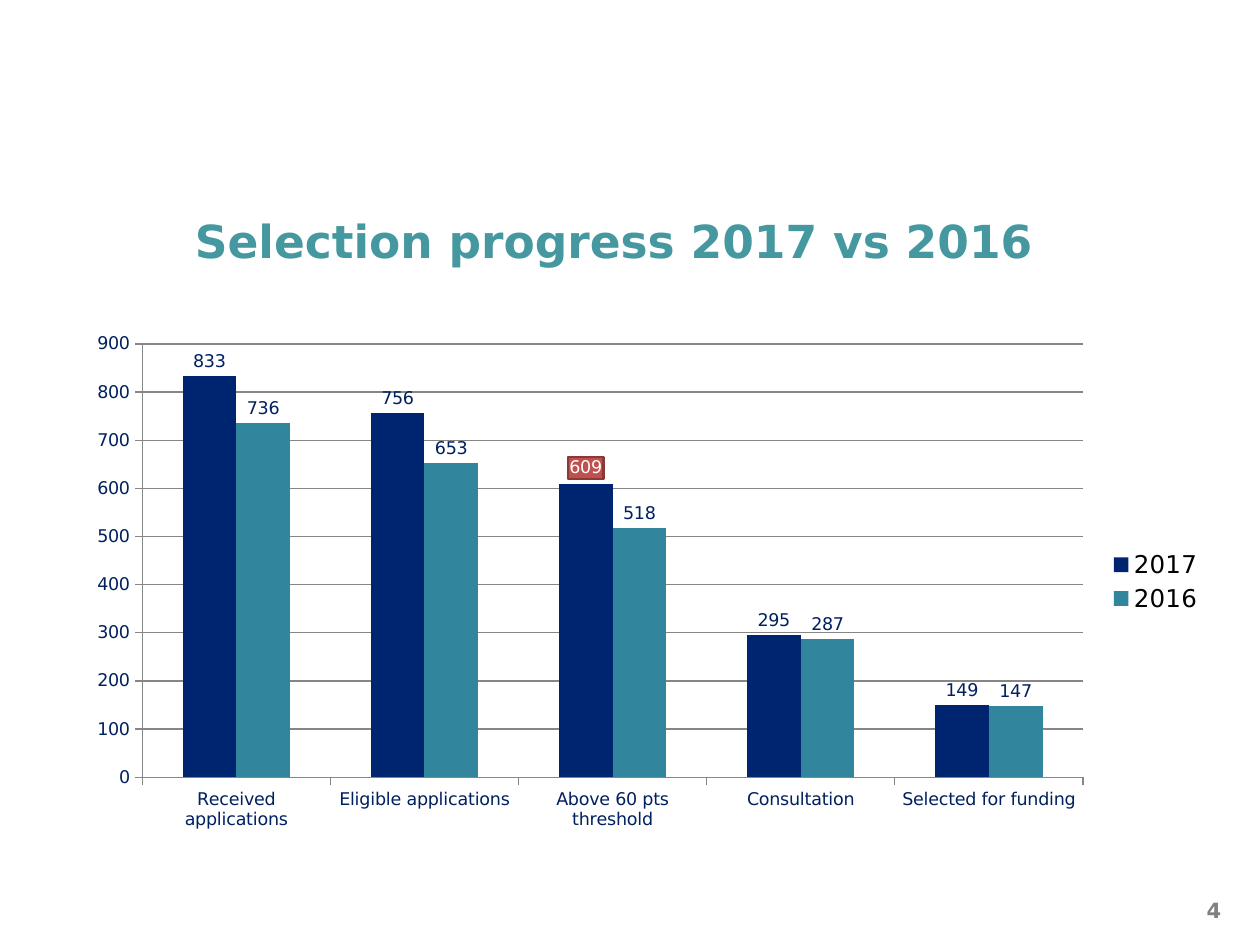
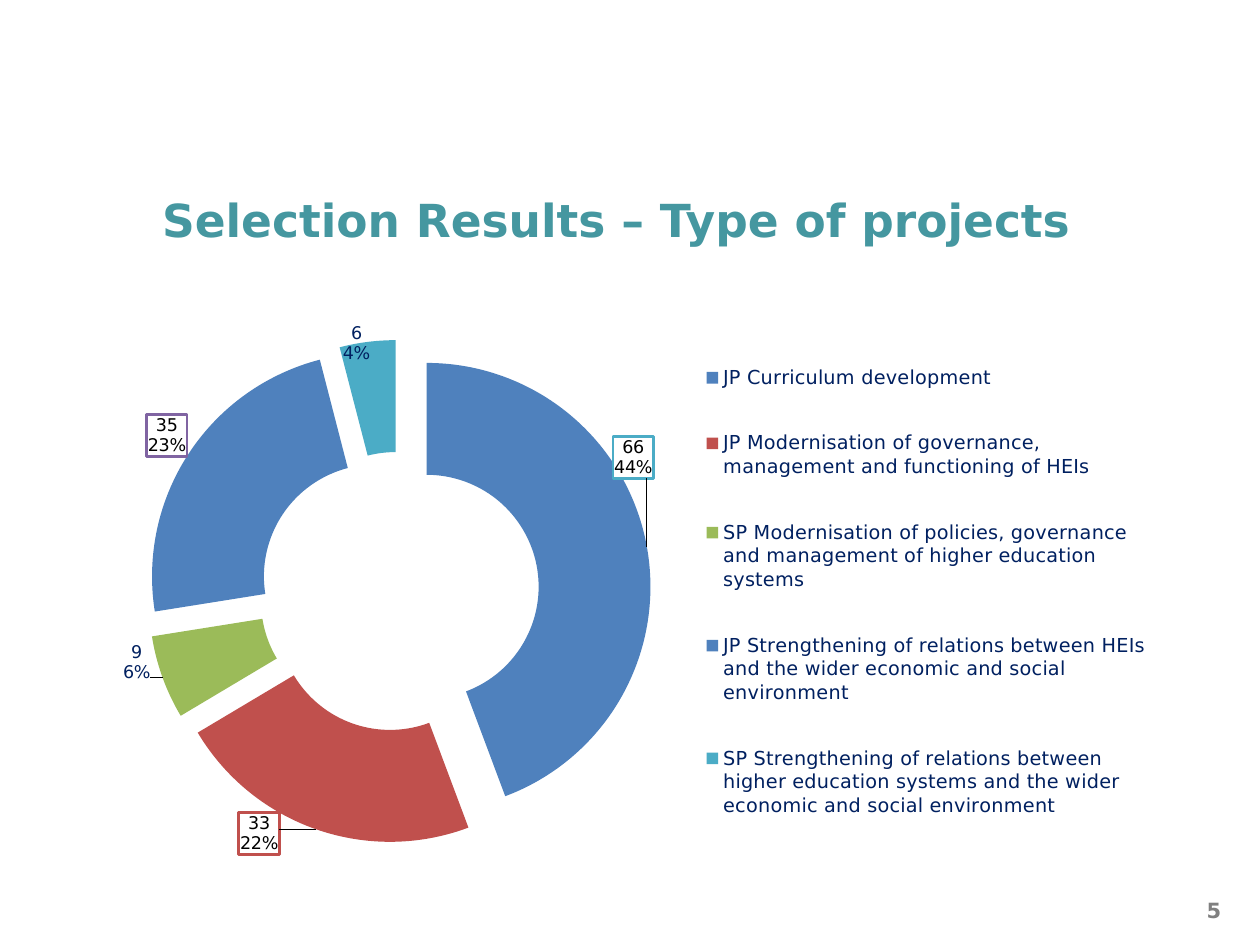
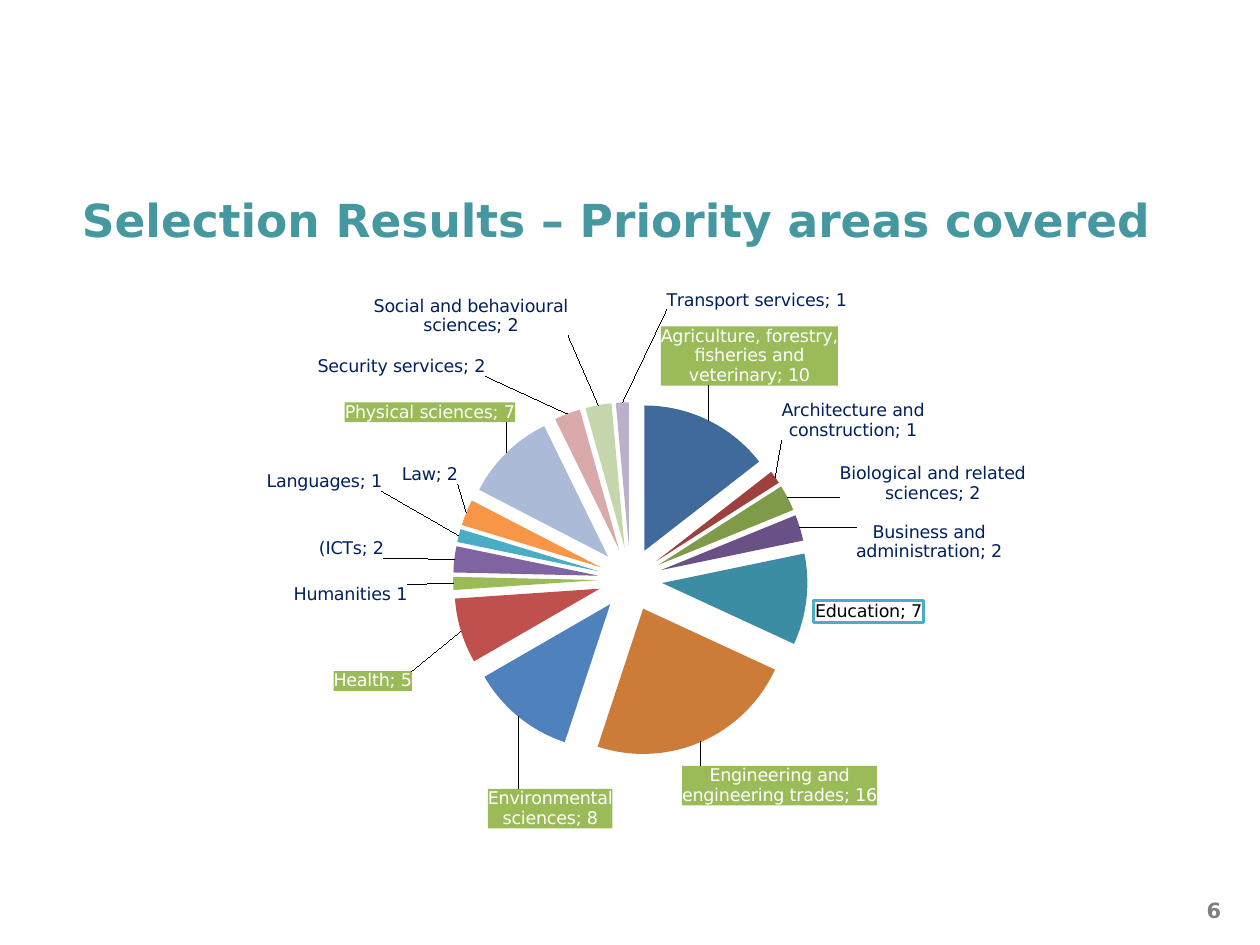
import math

import pptx
import pptx.chart.data
import pptx.dml.color
import pptx.enum.chart
import pptx.enum.text
import pptx.oxml
import pptx.oxml.ns
import pptx.util

Cm = pptx.util.Cm
FONT = "DejaVu Sans"
TEAL, GRAY, NAVY, BLACK, WHITE = "4597A0", "808080", "002060", "000000", "FFFFFF"
GREEN = "9BBB59"
LINE_HEIGHT = 0.4

PROGRESS = {
    "number": 4,
    "title": ("Selection progress 2017 vs 2016", (0.08, 4.34, 24.61, 1.19)),
    "area": (1.5, 6.53, 23.01, 10.39),
    "categories": ["Received applications", "Eligible applications", "Above 60 pts threshold",
                   "Consultation", "Selected for funding"],
    "series": [("2017", [833, 756, 609, 295, 149], "002570"),
               ("2016", [736, 653, 518, 287, 147], "31859C")],
}

PROJECT_TYPES = {
    "number": 5,
    "title": ("Selection Results – Type of projects", (2.87, 3.92, 19.13, 1.19)),
    "area": (2.11, 6.53, 21.21, 10.8),
    "plot": {"x": 0.04, "y": 0.03, "w": 0.48, "h": 0.94},
    "legend": {"x": 0.566, "y": 0, "w": 0.43, "h": 1},
    "centre": (8.02, 11.91),
    "radius": 3.93,
    "explosion": 25,
    "slices": [
        ("JP Curriculum development", 66, "4F81BD", (12.72, 9.21), "4BACC6"),
        ("JP Modernisation of governance, management and functioning of HEIs",
         33, "C0504D", (5.2, 16.77), "C0504D"),
        ("SP Modernisation of policies, governance and management of higher education systems",
         9, "9BBB59", (2.74, 13.33), None),
        ("JP Strengthening of relations between HEIs and the wider economic and social environment",
         35, "4F81BD", (3.35, 8.77), "8064A2"),
        ("SP Strengthening of relations between higher education systems and the wider "
         "economic and social environment", 6, "4BACC6", (7.16, 6.92), None),
    ],
}

PLAIN = {"color": NAVY}
FILLED = {"color": WHITE, "fill": GREEN}
OUTLINED = {"color": BLACK, "fill": WHITE, "line": "4BACC6"}

PRIORITY_AREAS = {
    "number": 6,
    "title": ("Selection Results – Priority areas covered", (1.32, 3.92, 22.23, 1.19)),
    "area": (2.64, 5.54, 20.14, 11.79),
    "plot": {"x": 0, "y": 0.218, "w": 1, "h": 0.606},
    "centre": (12.7, 11.67),
    "radius": 3.69,
    "explosion": 22,
    "slices": [
        ("Agriculture, forestry, fisheries and veterinary", 10, "416A9C", (13.3, 6.59, 3.57, 3), FILLED),
        ("Architecture and construction", 1, "9E413E", (15.72, 8.08, 2.9, 2), PLAIN),
        ("Biological and related sciences", 2, "7F9A48", (16.89, 9.35, 3.73, 2), PLAIN),
        ("Business and administration", 2, "695185", (17.22, 10.52, 2.94, 2), PLAIN),
        ("Education", 7, "3C8DA3", None, OUTLINED),
        ("Engineering and engineering trades", 16, "CC7B38", (13.73, 15.4, 3.37, 3), FILLED),
        ("Environmental sciences", 8, "4F81BD", (9.86, 15.87, 2.5, 2), FILLED),
        ("Health", 5, "C0504D", (6.75, 13.51, 1.57, 1), FILLED),
        ("Humanities (except languages)", 1, "9BBB59", (5.95, 11.77, 2.28, 1), PLAIN),
        ("Information and Communication Technologies (ICTs)", 2, "8064A2", (6.45, 10.85, 1.31, 1), PLAIN),
        ("Languages", 1, "4BACC6", (5.4, 9.5, 2.32, 1), PLAIN),
        ("Law", 2, "F79646", (8.12, 9.37, 1.13, 1), PLAIN),
        ("Physical sciences", 7, "AABAD7", (6.96, 8.12, 3.43, 1), FILLED),
        ("Security services", 2, "D9AAA9", (6.41, 7.2, 3.37, 1), PLAIN),
        ("Social and behavioural sciences", 2, "C6D6AC", (7.54, 5.99, 3.91, 2), PLAIN),
        ("Transport services", 1, "BAB0C9", (13.43, 5.87, 3.63, 1), PLAIN),
    ],
    "short_labels": {8: "Humanities 1", 9: "(ICTs; 2"},
}


def rgb(value):
    return pptx.dml.color.RGBColor.from_string(value)


def tag(name):
    return pptx.oxml.ns.qn(f"c:{name}")


def xml(text):
    names = pptx.oxml.ns.nsdecls("c", "a")
    return pptx.oxml.parse_xml(text.replace(">", f" {names}>", 1))


def layout(places, fixed=False, inner=False):
    target = '<c:layoutTarget val="inner"/>' if inner else ""
    modes = "".join(f'<c:{side}Mode val="edge"/>' for side in "xy") if fixed else ""
    sizes = "".join(f'<c:{key} val="{value:.4f}"/>' for key, value in places.items())
    return xml(f"<c:layout><c:manualLayout>{target}{modes}{sizes}</c:manualLayout></c:layout>")


def style(font, size=10, color=BLACK, bold=False):
    font.name, font.size, font.bold = FONT, pptx.util.Pt(size), bold
    font.color.rgb = rgb(color)


def write(frame, text, align, spacing=None, **look):
    para = frame.paragraphs[0]
    para.alignment, para.line_spacing = align, spacing
    span = para.add_run()
    span.text = text
    style(span.font, **look)


def add_page(deck, content):
    page = deck.slides.add_slide(deck.slide_layouts[5])
    text, place = content["title"]
    title = page.shapes.title
    title.left, title.top, title.width, title.height = map(Cm, place)
    frame = title.text_frame
    frame.auto_size = pptx.enum.text.MSO_AUTO_SIZE.NONE
    frame.word_wrap = False
    frame.vertical_anchor = pptx.enum.text.MSO_ANCHOR.MIDDLE
    write(frame, text, pptx.enum.text.PP_ALIGN.CENTER, spacing=0.85, size=26, color=TEAL, bold=True)
    box = page.shapes.add_textbox(Cm(18.95), Cm(17.96), Cm(5.92), Cm(1.32))
    box.text_frame.word_wrap = True
    write(box.text_frame, str(content["number"]), pptx.enum.text.PP_ALIGN.RIGHT,
          size=12, color=GRAY, bold=True)
    return page


def add_chart(page, kind, content, categories, series, legend=None):
    data = pptx.chart.data.CategoryChartData()
    data.categories = categories
    for name, values in series:
        data.add_series(name, values)
    chart = page.shapes.add_chart(kind, *map(Cm, content["area"]), data).chart
    chart.has_title = False
    style(chart.font)
    chart.has_legend = legend is not None
    if legend:
        chart.legend.position = pptx.enum.chart.XL_LEGEND_POSITION.RIGHT
        chart.legend.include_in_layout = False
        style(chart.legend.font, **legend)
    return chart


def format_label(point, color, fill=None, line=None, shift=None, text=None, shows=("Val",),
                 separator=None):
    label = point.data_label
    if text:
        label.text_frame.text = text
        style(label.text_frame.paragraphs[0].runs[0].font, color=color)
    else:
        style(label.font, color=color)
    element = label._dLbl
    if shift:
        element.find(tag("idx")).addnext(layout(dict(zip("xy", shift))))
    if fill:
        solid = '<a:solidFill><a:srgbClr val="{}"/></a:solidFill>'
        edge = f'<a:ln w="19050">{solid.format(line)}</a:ln>' if line else ""
        element.find(tag("txPr")).addprevious(xml(f"<c:spPr>{solid.format(fill)}{edge}</c:spPr>"))
    for part in ("Val", "CatName", "Percent"):
        element.find(tag(f"show{part}")).set("val", str(int(part in shows)))
    if separator:
        element.append(xml(f"<c:separator>{separator}</c:separator>"))


def label_angles(values):
    total, before = sum(values), 0
    for value in values:
        yield 2 * math.pi * (before + value / 2) / total
        before += value


def label_shift(content, angle, target, size=(0, 0)):
    shift = []
    directions = (math.sin(angle), -math.cos(angle))
    for axis, direction in enumerate(directions):
        side = 0 if abs(direction) < 0.087 else math.copysign(0.5, direction)
        usual = content["centre"][axis] + content["radius"] * direction + side * size[axis]
        shift.append((target[axis] - usual) / content["area"][2 + axis])
    return shift


def add_slices(page, kind, content, legend=None):
    names, values, colors, *_ = zip(*content["slices"])
    chart = add_chart(page, kind, content, names, [("Series 1", values)], legend)
    plot = chart.plots[0]
    plot.vary_by_categories = True
    series = plot.series[0]
    style(series.data_labels.font, color=NAVY)
    for index, color in enumerate(colors):
        fill = series.points[index].format.fill
        fill.solid()
        fill.fore_color.rgb = rgb(color)
    ring = series._element
    for old in ring.findall(tag("explosion")):
        ring.remove(old)
    slices = ring.findall(tag("dPt"))
    for follower in [slices[0]] + [shape.find(tag("spPr")) for shape in slices]:
        follower.addprevious(xml(f'<c:explosion val="{content["explosion"]}"></c:explosion>'))
    area = chart._chartSpace.chart.plotArea
    for old in area.findall(tag("layout")):
        area.remove(old)
    area.insert(0, layout(content["plot"], fixed=True, inner=True))
    return chart, series, list(label_angles(values))


def build_progress(deck):
    page = add_page(deck, PROGRESS)
    chart = add_chart(page, pptx.enum.chart.XL_CHART_TYPE.COLUMN_CLUSTERED, PROGRESS,
                      PROGRESS["categories"], [row[:2] for row in PROGRESS["series"]],
                      {"size": 14})
    plot = chart.plots[0]
    plot.vary_by_categories = False
    plot.gap_width, plot.overlap = 150, 0
    for series, (_, _, color) in zip(plot.series, PROGRESS["series"]):
        series.format.fill.solid()
        series.format.fill.fore_color.rgb = rgb(color)
        labels = series.data_labels
        labels.show_value = True
        labels.position = pptx.enum.chart.XL_LABEL_POSITION.OUTSIDE_END
        style(labels.font, color=NAVY)
    format_label(plot.series[0].points[2], WHITE, fill="C0504D", line="8C3836")
    scale = chart.value_axis
    scale.minimum_scale, scale.maximum_scale, scale.major_unit = 0, 900, 100
    scale.has_major_gridlines = True
    for axis in (scale, chart.category_axis):
        style(axis.tick_labels.font, color=NAVY)
        axis.major_tick_mark = pptx.enum.chart.XL_TICK_MARK.OUTSIDE
    for line in (scale.format.line, chart.category_axis.format.line, scale.major_gridlines.format.line):
        line.color.rgb = rgb("868686")
        line.width = pptx.util.Pt(0.75)


def build_project_types(deck):
    page = add_page(deck, PROJECT_TYPES)
    chart, series, angles = add_slices(page, pptx.enum.chart.XL_CHART_TYPE.DOUGHNUT_EXPLODED,
                                       PROJECT_TYPES, {"size": 11, "color": NAVY})
    legend = chart.legend._element
    for old in legend.findall(tag("layout")):
        legend.remove(old)
    legend.find(tag("legendPos")).addnext(layout(PROJECT_TYPES["legend"], fixed=True))
    for index, (_, _, _, target, line) in enumerate(PROJECT_TYPES["slices"]):
        look = {**OUTLINED, "line": line} if line else PLAIN
        format_label(series.points[index], **look, shows=("Val", "Percent"), separator="\n",
                     shift=label_shift(PROJECT_TYPES, angles[index], target))


def build_priority_areas(deck):
    page = add_page(deck, PRIORITY_AREAS)
    _, series, angles = add_slices(page, pptx.enum.chart.XL_CHART_TYPE.PIE, PRIORITY_AREAS)
    series.data_labels.position = pptx.enum.chart.XL_LABEL_POSITION.OUTSIDE_END
    for index, (_, _, _, place, look) in enumerate(PRIORITY_AREAS["slices"]):
        shift = None
        if place:
            left, top, width, lines = place
            height = lines * LINE_HEIGHT
            target = (left + width / 2, top + height / 2)
            shift = label_shift(PRIORITY_AREAS, angles[index], target, (width, height))
        format_label(series.points[index], **look, shift=shift, shows=("Val", "CatName"),
                     text=PRIORITY_AREAS["short_labels"].get(index), separator="; ")


def main():
    deck = pptx.Presentation()
    deck.slide_width, deck.slide_height = Cm(25.4), Cm(19.05)
    build_progress(deck)
    build_project_types(deck)
    build_priority_areas(deck)
    deck.save("out.pptx")


if __name__ == "__main__":
    main()
